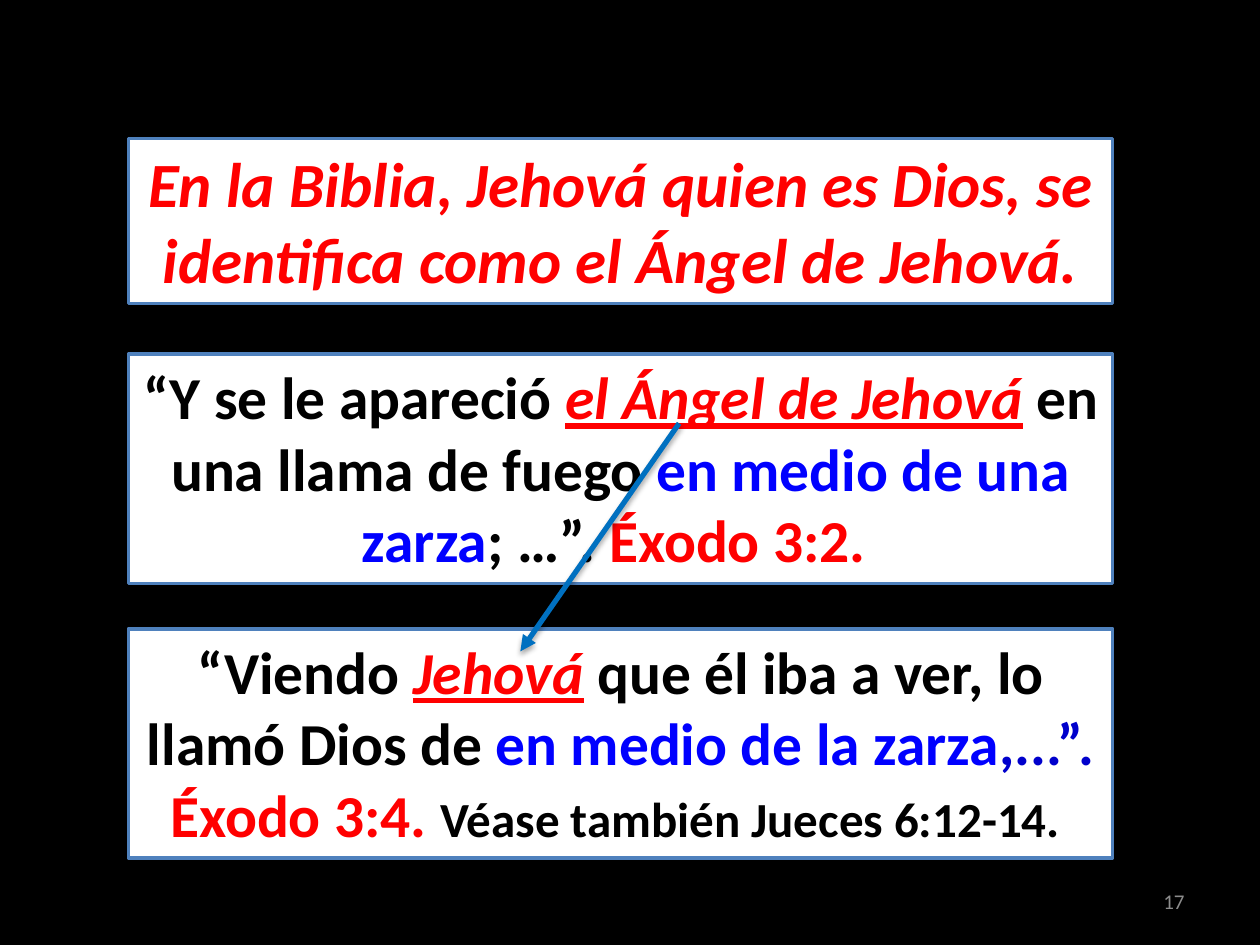
from lxml import etree
from pptx import Presentation
from pptx.dml.color import RGBColor
from pptx.enum.shapes import MSO_CONNECTOR, MSO_SHAPE
from pptx.enum.text import MSO_ANCHOR, MSO_AUTO_SIZE, PP_ALIGN
from pptx.oxml import parse_xml
from pptx.oxml.ns import nsdecls, qn
from pptx.util import Inches, Pt

RECTANGLE = MSO_SHAPE.RECTANGLE
STRAIGHT = MSO_CONNECTOR.STRAIGHT
MIDDLE = MSO_ANCHOR.MIDDLE
GROW = MSO_AUTO_SIZE.SHAPE_TO_FIT_TEXT
CENTER, RIGHT = PP_ALIGN.CENTER, PP_ALIGN.RIGHT

BLACK = RGBColor(0x00, 0x00, 0x00)
WHITE = RGBColor(0xFF, 0xFF, 0xFF)
RED = RGBColor(0xFF, 0x00, 0x00)
BLUE = RGBColor(0x00, 0x00, 0xFF)
DARK_BLUE = RGBColor(0x00, 0x00, 0xCC)
BORDER = RGBColor(0x4F, 0x81, 0xBD)
ARROW = RGBColor(0x00, 0x70, 0xC0)
GRAY = RGBColor(0x8C, 0x8C, 0x8C)
FONT = "Calibri"


def add_span(para, text, size, color, bold=True, italic=False, underline=False):
    span = para.add_run()
    span.text = text
    span.font.name = FONT
    span.font.size = Pt(size)
    span.font.color.rgb = color
    span.font.bold = bold
    span.font.italic = italic
    span.font.underline = underline


deck = Presentation()
deck.slide_width, deck.slide_height = Inches(10), Inches(7.5)
page = deck.slides.add_slide(deck.slide_layouts[6])
page.background.fill.solid()
page.background.fill.fore_color.rgb = BLACK

# Slide number
number_box = page.shapes.add_textbox(Inches(7.17), Inches(6.95), Inches(2.33), Inches(0.4))
number_box.text_frame.word_wrap = True
number_box.text_frame.vertical_anchor = MIDDLE
number_para = number_box.text_frame.paragraphs[0]
number_para.alignment = RIGHT
add_span(number_para, "17", 12, GRAY, bold=False)

# Statement and verses: top, height, then spans of text, size, colour, italic, underline
boxes = [
    (1.1, 1.31, [
        ("En la Biblia, Jehová quien es Dios, se identifica como el Ángel de Jehová.",
         36, RED, True, False),
    ]),
    (2.81, 1.82, [
        ("“Y se le apareció ", 34, BLACK, False, False),
        ("el Ángel de Jehová", 34, RED, True, True),
        (" ", 34, RED, True, False),
        ("en una llama de fuego ", 34, BLACK, False, False),
        ("en medio de una zarza", 34, BLUE, False, False),
        ("; …”. ", 34, BLACK, False, False),
        ("Éxodo 3:2. ", 34, RED, False, False),
    ]),
    (4.99, 1.82, [
        ("“Viendo ", 34, BLACK, False, False),
        ("Jehová", 34, RED, True, True),
        (" ", 34, DARK_BLUE, True, False),
        ("que él iba a ver, lo llamó Dios de ", 34, BLACK, False, False),
        ("en medio de la zarza", 34, BLUE, False, False),
        (",...”. ", 34, DARK_BLUE, False, False),
        ("Éxodo 3:4. ", 34, RED, False, False),
        ("Véase también Jueces 6:12-14. ", 28, BLACK, False, False),
    ]),
]
for top, height, spans in boxes:
    box = page.shapes.add_shape(
        RECTANGLE, Inches(1.02), Inches(top), Inches(7.81), Inches(height))
    box.shadow.inherit = False
    box.fill.solid()
    box.fill.fore_color.rgb = WHITE
    box.line.color.rgb = BORDER
    box.line.width = Pt(2)
    frame = box.text_frame
    frame.word_wrap = True
    frame.auto_size = GROW
    frame.vertical_anchor = MSO_ANCHOR.TOP
    para = frame.paragraphs[0]
    para.alignment = CENTER
    for text, size, color, italic, underline in spans:
        add_span(para, text, size, color, italic=italic, underline=underline)

# Arrow from the Angel to Jehová, with a soft shadow below
arrow = page.shapes.add_connector(
    STRAIGHT, Inches(5.39), Inches(3.36), Inches(4.13), Inches(5.17))
arrow.line.color.rgb = ARROW
arrow.line.width = Pt(3)
etree.SubElement(arrow.line._get_or_add_ln(), qn("a:tailEnd"), type="triangle")
arrow._element.spPr.append(parse_xml(
    f'<a:effectLst {nsdecls("a")}>'
    '<a:outerShdw blurRad="40000" dist="23000" dir="5400000" rotWithShape="0">'
    '<a:srgbClr val="000000"><a:alpha val="35000"/></a:srgbClr>'
    '</a:outerShdw></a:effectLst>'))

deck.save("out.pptx")
